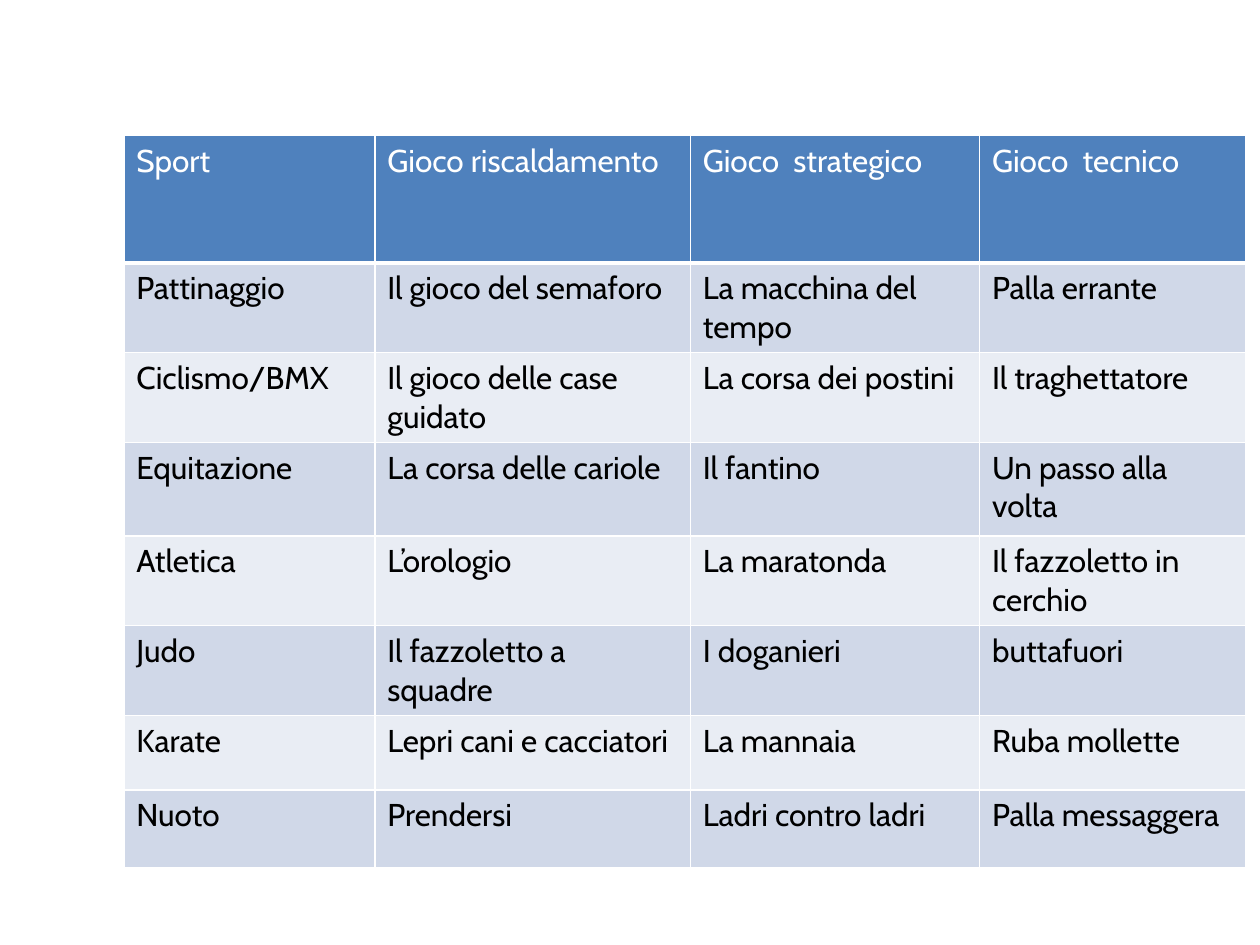
from dataclasses import dataclass

from lxml import etree
from pptx import Presentation
from pptx.dml.color import RGBColor
from pptx.enum.text import PP_ALIGN
from pptx.oxml.ns import qn
from pptx.util import Cm, Pt

LEFT = PP_ALIGN.LEFT
FONT = "Cabin"
FONT_SIZE = Pt(18)
COLORS = {
    "header": "4F81BD",
    "band_dark": "D0D8E8",
    "band_light": "E9EDF4",
    "border": "FFFFFF",
    "header_text": "FFFFFF",
    "body_text": "000000",
}
TABLE_LEFT, TABLE_TOP = 2.5, 2.73
COLUMN_WIDTHS = [5.06, 6.36, 5.83, 5.36]


@dataclass
class GameRow:
    height: float
    sport: str
    warm_up: str
    strategic: str
    technical: str

    @property
    def texts(self) -> list[str]:
        return [self.sport, self.warm_up, self.strategic, self.technical]


@dataclass
class RowStyle:
    fill: str
    text: str
    bottom_border: float


HEADER_STYLE = RowStyle("header", "header_text", 3)
BODY_STYLES = [
    RowStyle("band_light", "body_text", 1),
    RowStyle("band_dark", "body_text", 1),
]
ROWS = [
    GameRow(2.57, "Sport", "Gioco riscaldamento", "Gioco  strategico", "Gioco  tecnico"),
    GameRow(1.8, "Pattinaggio", "Il gioco del semaforo", "La macchina del tempo", "Palla errante"),
    GameRow(1.8, "Ciclismo/BMX", "Il gioco delle case guidato", "La corsa dei postini", "Il traghettatore"),
    GameRow(1.88, "Equitazione", "La corsa delle cariole", "Il fantino", "Un passo alla volta"),
    GameRow(1.8, "Atletica", "L’orologio", "La maratonda", "Il fazzoletto in cerchio"),
    GameRow(1.8, "Judo", "Il fazzoletto a squadre", "I doganieri", "buttafuori"),
    GameRow(1.5, "Karate", "Lepri cani e cacciatori", "La mannaia", "Ruba mollette"),
    GameRow(1.57, "Nuoto", "Prendersi", "Ladri contro ladri", "Palla messaggera"),
]


def set_borders(cell, bottom: float) -> None:
    properties = cell._tc.get_or_add_tcPr()
    for side, width in {"lnL": 1, "lnR": 1, "lnT": 1, "lnB": bottom}.items():
        line = etree.SubElement(properties, qn(f"a:{side}"), w=str(Pt(width)))
        fill = etree.SubElement(line, qn("a:solidFill"))
        etree.SubElement(fill, qn("a:srgbClr"), val=COLORS["border"])


def fill_cell(cell, text: str, style: RowStyle) -> None:
    set_borders(cell, style.bottom_border)
    cell.fill.solid()
    cell.fill.fore_color.rgb = RGBColor.from_string(COLORS[style.fill])
    cell.margin_left = cell.margin_right = Cm(0.25)
    cell.margin_top = cell.margin_bottom = Cm(0.13)
    para = cell.text_frame.paragraphs[0]
    para.alignment = LEFT
    span = para.add_run()
    span.text = text
    span.font.name = FONT
    span.font.size = FONT_SIZE
    span.font.bold = False
    span.font.color.rgb = RGBColor.from_string(COLORS[style.text])


def add_games_table(page) -> None:
    table = page.shapes.add_table(
        len(ROWS), len(COLUMN_WIDTHS), Cm(TABLE_LEFT), Cm(TABLE_TOP),
        Cm(sum(COLUMN_WIDTHS)), Cm(sum(row.height for row in ROWS)),
    ).table
    for column, width in zip(table.columns, COLUMN_WIDTHS):
        column.width = Cm(width)
    for index, row in enumerate(ROWS):
        table.rows[index].height = Cm(row.height)
        style = BODY_STYLES[index % 2] if index else HEADER_STYLE
        for cell, text in zip(table.rows[index].cells, row.texts):
            fill_cell(cell, text, style)


def main() -> None:
    deck = Presentation()
    deck.slide_width, deck.slide_height = Cm(25.4), Cm(19.05)
    page = deck.slides.add_slide(deck.slide_layouts[6])
    add_games_table(page)
    deck.save("out.pptx")


if __name__ == "__main__":
    main()
